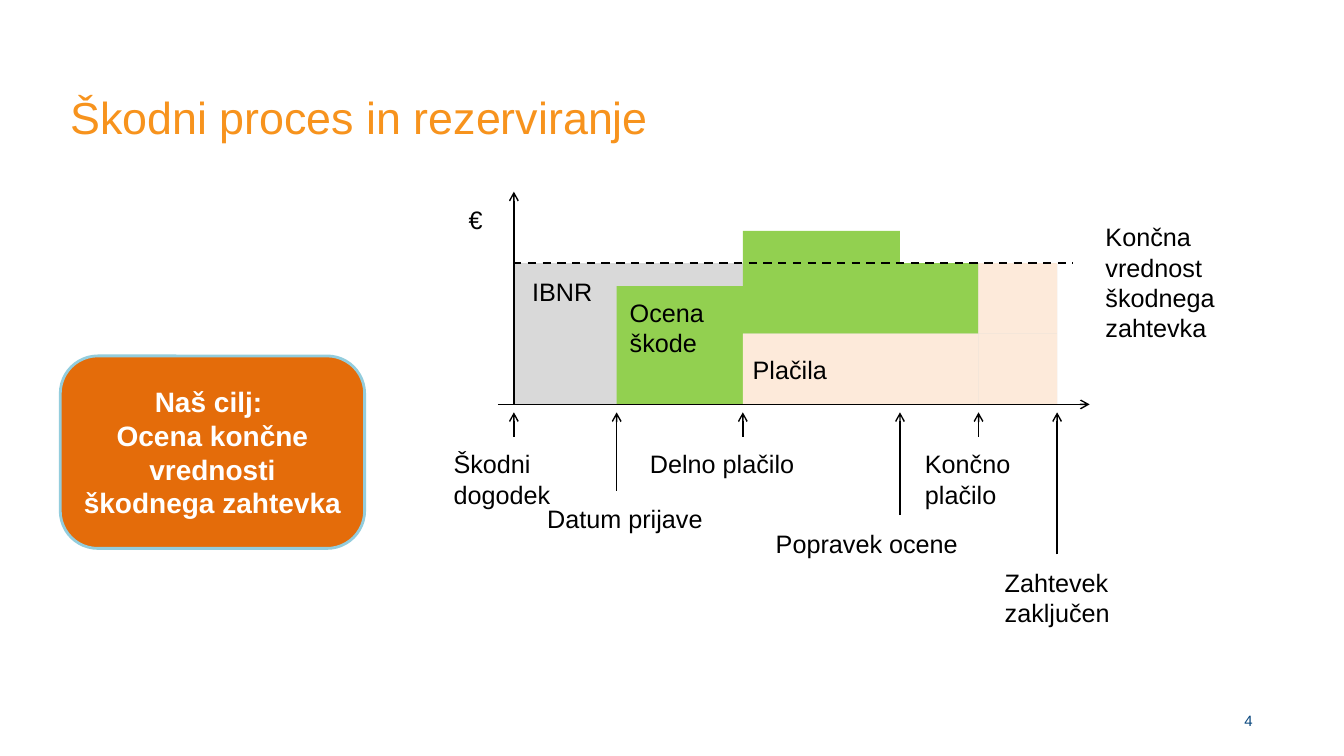
from lxml import etree
from pptx import Presentation
from pptx.dml.color import RGBColor
from pptx.enum import dml, shapes, text
from pptx.oxml.ns import qn
from pptx.util import Cm, Pt

BLACK, GREY, GREEN, PEACH = "000000", "D9D9D9", "92D050", "FDEADA"


def write(shape, content, size, color, align=text.PP_ALIGN.LEFT, bold=False):
    frame = shape.text_frame
    frame.text = content
    frame.word_wrap = True
    for para in frame.paragraphs:
        para.alignment = align
        for span in para.runs:
            span.font.name = "Arial"
            span.font.size = Pt(size)
            span.font.bold = bold
            span.font.color.rgb = RGBColor.from_string(color)
    return frame


def draw_line(x1, y1, x2, y2, width=1, arrow=True):
    """Draw a black line, with an open arrowhead at its end or else dashed."""
    line = page.shapes.add_connector(
        shapes.MSO_CONNECTOR.STRAIGHT, Cm(x1), Cm(y1), Cm(x2), Cm(y2))
    line.line.color.rgb = RGBColor.from_string(BLACK)
    line.line.width = Pt(width)
    if arrow:
        outline = line.line._get_or_add_ln()
        etree.SubElement(outline, qn("a:tailEnd"), type="arrow")
    else:
        line.line.dash_style = dml.MSO_LINE.DASH
    etree.SubElement(line._element.spPr, qn("a:effectLst"))


deck = Presentation()
deck.slide_width, deck.slide_height = Cm(33.87), Cm(19.05)
page = deck.slides.add_slide(deck.slide_layouts[5])

title = page.shapes.title
title.left, title.top, title.width, title.height = Cm(1.52), Cm(2.13), Cm(27.84), Cm(3.2)
frame = write(title, "Škodni proces in rezerviranje", 32, "F7931D")
frame.vertical_anchor = text.MSO_ANCHOR.TOP
frame.auto_size = text.MSO_AUTO_SIZE.NONE

# Dates on the time axis and amounts on the value axis
event, report, part_paid, revised, final_paid, closed = 12.95, 15.54, 18.72, 22.68, 24.66, 26.64
base, paid, estimate, ultimate, peak = 10.19, 8.41, 7.21, 6.63, 5.82

blocks = [
    (event, ultimate, closed, base, GREY),
    (revised, ultimate, final_paid, paid, GREEN),
    (part_paid, peak, revised, paid, GREEN),
    (report, estimate, part_paid, base, GREEN),
    (final_paid, ultimate, closed, paid, PEACH),
    (part_paid, paid, revised, base, PEACH),
    (revised, paid, final_paid, base, PEACH),
    (final_paid, paid, closed, base, PEACH),
]
for left, top, right, bottom, color in blocks:
    block = page.shapes.add_shape(
        shapes.MSO_SHAPE.RECTANGLE, Cm(left), Cm(top), Cm(right - left), Cm(bottom - top))
    block.shadow.inherit = False
    block.fill.solid()
    block.fill.fore_color.rgb = RGBColor.from_string(color)
    block.line.fill.background()

draw_line(12.55, base, 27.46, base)
draw_line(event, base, event, 4.83)
draw_line(12.93, ultimate, 27.03, ultimate, width=1.5, arrow=False)

arrow_starts = [(event, 11), (report, 12.37), (part_paid, 11),
                (revised, 12.98), (final_paid, 11), (closed, 13.97)]
for date, start in arrow_starts:
    draw_line(date, start, date, 10.39)

labels = [
    ("€", 11.56, 5.03, 0.99, 1.02),
    ("Škodni dogodek", 11.18, 11.18, 3.58, 1.8),
    ("Delno plačilo", 16.13, 11.18, 5.16, 1.02),
    ("Datum prijave", 13.54, 12.57, 4.5, 1.02),
    ("Popravek ocene", 19.3, 13.18, 7.75, 1.02),
    ("Končno plačilo", 23.06, 11.18, 3.38, 1.8),
    ("Zahtevek zaključen", 25.07, 14.17, 4.17, 1.8),
    ("Plačila", 18.72, 8.81, 4.17, 1.02),
    ("Ocena škode", 15.62, 7.37, 3.07, 1.8),
    ("IBNR", 13.16, 6.83, 4.17, 1.02),
    ("Končna vrednost škodnega zahtevka", 27.61, 5.46, 3.35, 3.33),
]
for content, left, top, width, height in labels:
    box = page.shapes.add_textbox(Cm(left), Cm(top), Cm(width), Cm(height))
    write(box, content, 18, BLACK).auto_size = text.MSO_AUTO_SIZE.SHAPE_TO_FIT_TEXT

goal = page.shapes.add_shape(
    shapes.MSO_SHAPE.ROUNDED_RECTANGLE, Cm(1.52), Cm(8.97), Cm(7.67), Cm(4.85))
goal.adjustments[0] = 0.195
goal.shadow.inherit = False
goal.fill.solid()
goal.fill.fore_color.rgb = RGBColor.from_string("E46C0A")
goal.line.color.rgb = RGBColor.from_string("93CDDD")
goal.line.width = Pt(2)
frame = write(goal, "Naš cilj: \nOcena končne vrednosti škodnega zahtevka", 20, "FFFFFF",
              text.PP_ALIGN.CENTER, bold=True)
frame.vertical_anchor = text.MSO_ANCHOR.MIDDLE

number = page.shapes.add_textbox(Cm(30.35), Cm(17.65), Cm(1.47), Cm(1.02))
frame = write(number, "4", 10.7, "08467D", text.PP_ALIGN.RIGHT)
frame.vertical_anchor = text.MSO_ANCHOR.MIDDLE

deck.save("out.pptx")
